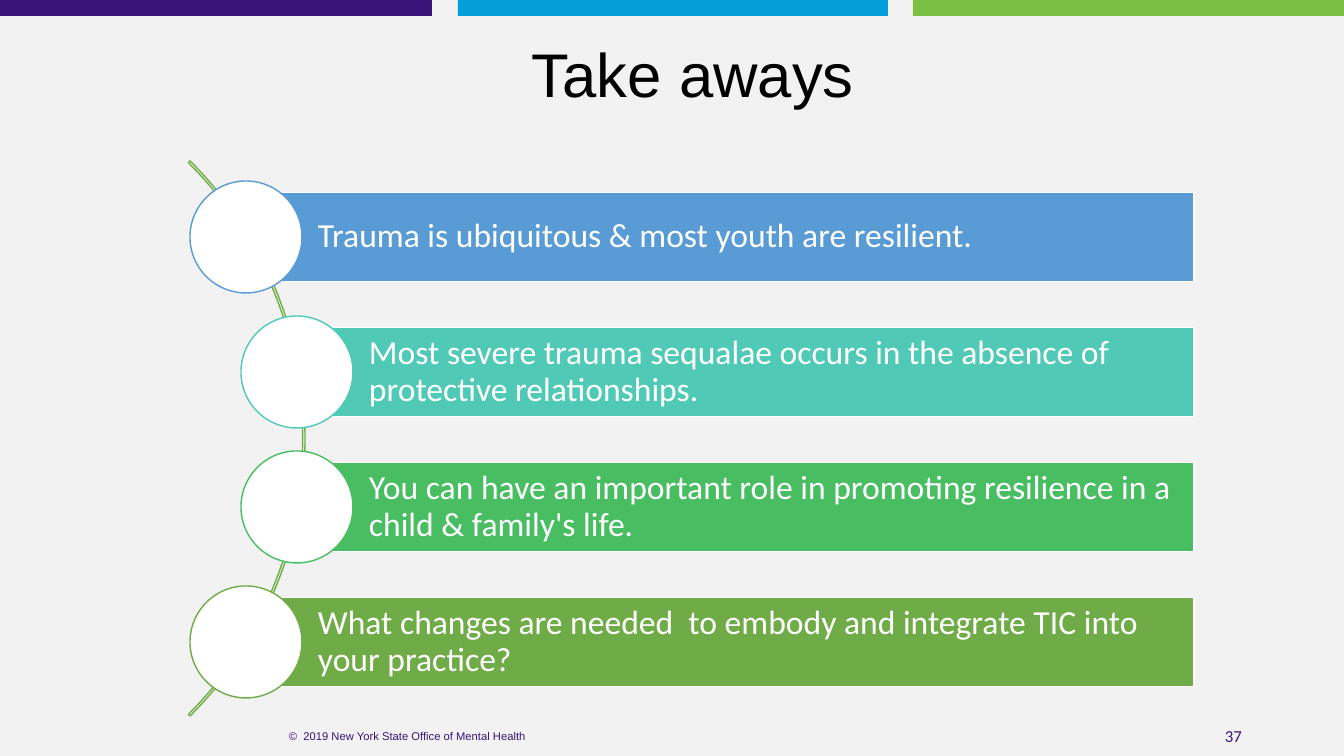
import pptx
import pptx.util
from pptx.dml.color import RGBColor
from pptx.enum.shapes import MSO_SHAPE
from pptx.enum.text import MSO_ANCHOR, PP_ALIGN

WHITE = RGBColor(0xFF, 0xFF, 0xFF)
BLACK = RGBColor(0x00, 0x00, 0x00)
PALE_GRAY = RGBColor(0xF2, 0xF2, 0xF2)
PURPLE = RGBColor(0x39, 0x13, 0x78)
SKY = RGBColor(0x04, 0x9F, 0xDA)
LIME = RGBColor(0x7B, 0xBF, 0x43)
ARC_GREEN = RGBColor(0x70, 0xAD, 0x47)
BLUE = RGBColor(0x59, 0x9B, 0xD5)
TEAL = RGBColor(0x50, 0xC9, 0xB6)
GREEN = RGBColor(0x48, 0xBD, 0x62)
OLIVE = RGBColor(0x6F, 0xAB, 0x46)

TOP_BANDS = [(0, 432, PURPLE), (458, 430, SKY), (913, 431, LIME)]

TEXTS = [
    ("37", (950, 716, 302, 40), "Calibri", 12, PURPLE, PP_ALIGN.RIGHT, 1.0),
    ("©  2019 New York State Office of Mental Health", (182, 716, 451, 40),
     "Arial", 8, PURPLE, PP_ALIGN.CENTER, 1.0),
    ("Take aways", (267, 33, 852, 89), "Arial", 44, BLACK, PP_ALIGN.CENTER, 0.9),
]

TAKEAWAYS = [
    ("Trauma is ubiquitous & most youth are resilient.", 246, BLUE),
    ("Most severe trauma sequalae occurs in the absence of protective relationships.",
     297, TEAL),
    ("You can have an important role in promoting resilience in a child & family's life.",
     297, GREEN),
    ("What changes are needed  to embody and integrate TIC into your practice?",
     246, OLIVE),
]

BAR_RIGHT = 1194
BAR_HEIGHT = 89
FIRST_CENTER = 237
LAST_CENTER = 642
CIRCLE = 112
EMU_PER_PX = 914400 / 100.8


def px(length):
    return pptx.util.Emu(round(length * EMU_PER_PX))


def add_shape(slide, kind, box, fill=None, line=None):
    shape = slide.shapes.add_shape(kind, *map(px, box))
    shape.shadow.inherit = False
    if fill is None:
        shape.fill.background()
    else:
        shape.fill.solid()
        shape.fill.fore_color.rgb = fill
    if line is None:
        shape.line.fill.background()
    else:
        shape.line.color.rgb = line
        shape.line.width = pptx.util.Pt(1)
    return shape


def write(shape, text, font, size, color, align, spacing, margins=(10, 5, 10, 5)):
    frame = shape.text_frame
    frame.word_wrap = True
    frame.vertical_anchor = MSO_ANCHOR.MIDDLE
    frame.margin_left, frame.margin_top, frame.margin_right, frame.margin_bottom = map(px, margins)
    frame.text = text
    paragraph = frame.paragraphs[0]
    paragraph.alignment = align
    paragraph.line_spacing = spacing
    for run in paragraph.runs:
        run.font.name = font
        run.font.size = pptx.util.Pt(size)
        run.font.color.rgb = color


def main():
    presentation = pptx.Presentation()
    presentation.slide_width = px(1344)
    presentation.slide_height = px(756)
    slide = presentation.slides.add_slide(presentation.slide_layouts[6])
    slide.background.fill.solid()
    slide.background.fill.fore_color.rgb = PALE_GRAY

    for left, width, color in TOP_BANDS:
        add_shape(slide, MSO_SHAPE.RECTANGLE, (left, 0, width, 16), color)

    for text, box, *style in TEXTS:
        write(slide.shapes.add_textbox(*map(px, box)), text, *style)

    arc = add_shape(slide, MSO_SHAPE.BLOCK_ARC, (-480, 46, 785, 785), line=ARC_GREEN)
    for index, value in enumerate((189, 27, 0.003)):
        arc.adjustments[index] = value

    pitch = (LAST_CENTER - FIRST_CENTER) / (len(TAKEAWAYS) - 1)
    for index, (text, left, color) in enumerate(TAKEAWAYS):
        center = FIRST_CENTER + index * pitch
        bar_box = (left, center - BAR_HEIGHT / 2, BAR_RIGHT - left, BAR_HEIGHT)
        bar = add_shape(slide, MSO_SHAPE.RECTANGLE, bar_box, color, WHITE)
        write(bar, text, "Calibri", 24, WHITE, PP_ALIGN.LEFT, 0.9, (72, 7, 7, 7))
        circle_box = (left - CIRCLE / 2, center - CIRCLE / 2, CIRCLE, CIRCLE)
        add_shape(slide, MSO_SHAPE.OVAL, circle_box, WHITE, color)

    presentation.save("out.pptx")


if __name__ == "__main__":
    main()
